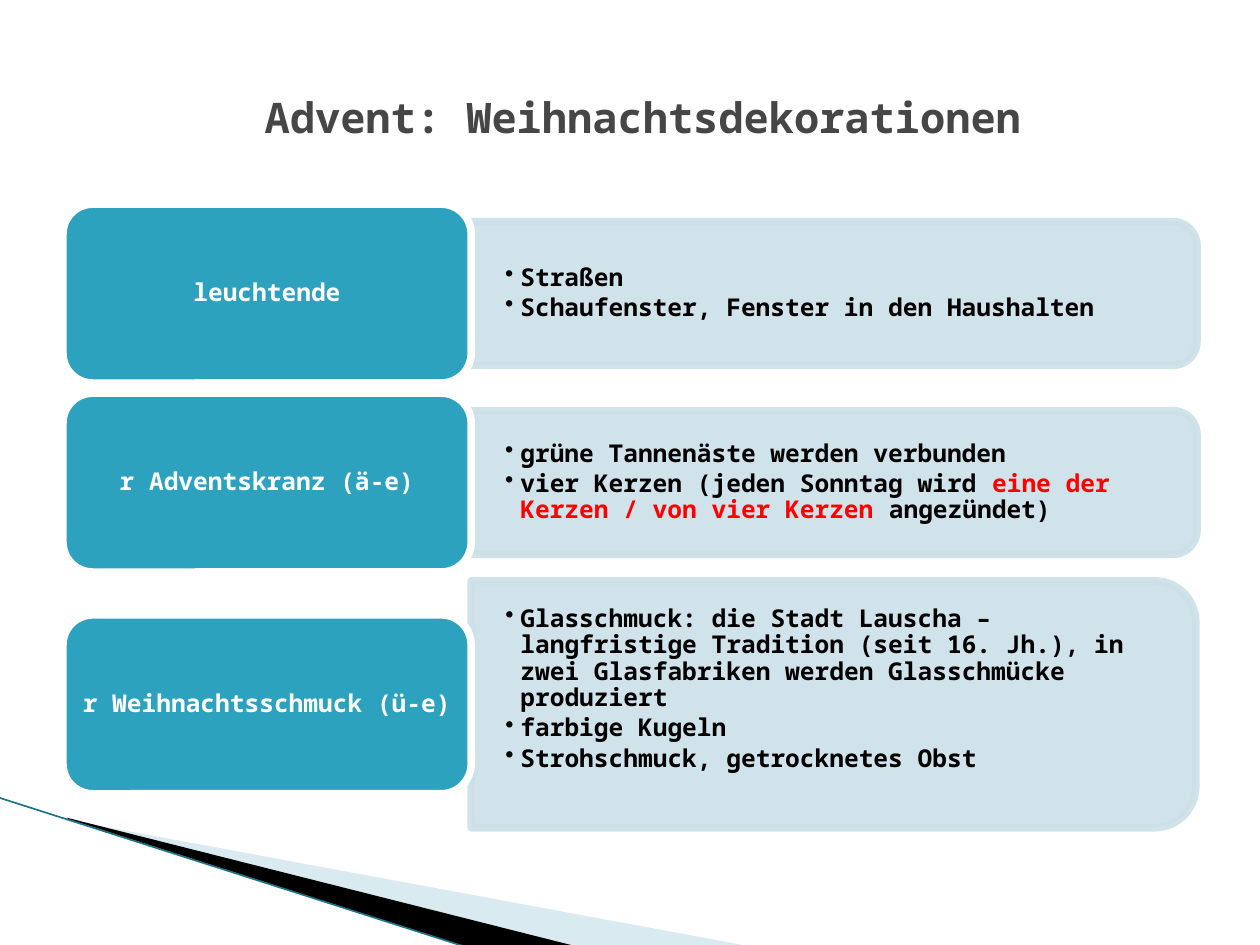
from dataclasses import dataclass
from typing import Any

from lxml.etree import SubElement
from pptx import Presentation
from pptx.dml.color import RGBColor
from pptx.enum.shapes import MSO_CONNECTOR, MSO_SHAPE
from pptx.enum.text import MSO_ANCHOR, PP_ALIGN
from pptx.oxml.ns import qn
from pptx.util import Inches, Pt

COLORS = {
    "title": "464646", "block": "2DA2BF", "panel": "CDE0E8", "white": "FFFFFF",
    "text": "000000", "accent": "FF0000", "wedge": "A0CBDC", "edge": "1F7385",
}
TOPICS = [
    ("leuchtende", 16.2, 11.4, 57.6, 1.4, [
        [("Straßen", "text")],
        [("Schaufenster, Fenster in den Haushalten", "text")],
    ]),
    ("r Adventskranz (ä-e)", 31.2, 11.4, 57.6, 1.4, [
        [("grüne Tannenäste werden verbunden", "text")],
        [("vier Kerzen (jeden Sonntag wird ", "text"),
         ("eine der Kerzen / von vier Kerzen", "accent"),
         (" angezündet)", "text")],
    ]),
    ("r Weihnachtsschmuck (ü-e)", 48.8, 19.6, 57.5, 3.8, [
        [("Glasschmuck: die Stadt Lauscha – langfristige Tradition "
          "(seit 16. Jh.), in zwei Glasfabriken werden Glasschmücke "
          "produziert", "text")],
        [("farbige Kugeln", "text")],
        [("Strohschmuck, getrocknetes Obst", "text")],
    ]),
]
BLOCK_LEFT, BLOCK_WIDTH, BLOCK_HEIGHT = 5, 32.4, 14.2
PANEL_LEFT = BLOCK_LEFT + BLOCK_WIDTH


@dataclass
class Deck:
    """Draws styled elements on a slide divided into 100 columns and 75 rows."""

    slide: Any
    unit: int
    font: str = "Noto Sans Mono"
    border: float = 4.33

    def grid(self, *lengths):
        return [round(length * self.unit) for length in lengths]

    def paint(self, color_format, color, opacity=100):
        color_format.fore_color.rgb = RGBColor.from_string(COLORS[color])
        if opacity < 100:
            for srgb in color_format._xPr.iter(qn("a:srgbClr")):
                SubElement(srgb, qn("a:alpha"), val=str(opacity * 1000))

    def style(self, run, size, color):
        run.font.name, run.font.size, run.font.bold = self.font, Pt(size), True
        run.font.color.rgb = RGBColor.from_string(COLORS[color])

    def frame(self, shape, insets):
        frame = shape.text_frame
        frame.word_wrap, frame.vertical_anchor = True, MSO_ANCHOR.MIDDLE
        (frame.margin_left, frame.margin_top,
         frame.margin_right, frame.margin_bottom) = self.grid(*insets)
        return frame

    def caption(self, shape, text, size, color, insets):
        frame = self.frame(shape, insets)
        frame.text = text
        line = frame.paragraphs[0]
        line.alignment = PP_ALIGN.CENTER
        self.style(line.runs[0], size, color)

    def title(self, text, *box):
        heading = self.slide.shapes.add_textbox(*self.grid(*box))
        self.caption(heading, text, 24, "title", (3, 0.5, 1, 0.5))

    def wedge(self, points, color, opacity=100):
        corners = [self.grid(*point) for point in points]
        builder = self.slide.shapes.build_freeform(*corners[0])
        builder.add_line_segments(corners[1:], close=True)
        wedge = builder.convert_to_shape()
        wedge.shadow.inherit = False
        wedge.fill.solid()
        self.paint(wedge.fill, color, opacity)
        wedge.line.fill.background()

    def edge(self, *ends):
        edge = self.slide.shapes.add_connector(
            MSO_CONNECTOR.STRAIGHT, *self.grid(*ends))
        edge.line.width = Pt(0.95)
        edge.line.color.rgb = RGBColor.from_string(COLORS["edge"])
        SubElement(edge._element.spPr, qn("a:effectLst"))

    def card(self, kind, box, fill, line, opacity=100):
        card = self.slide.shapes.add_shape(kind, *self.grid(*box))
        card.shadow.inherit = False
        card.line.width = Pt(self.border)
        for part, color in ((card.fill, fill), (card.line.fill, line)):
            part.solid()
            self.paint(part, color, opacity)
        return card

    def block(self, text, top):
        box = (BLOCK_LEFT, top, BLOCK_WIDTH, BLOCK_HEIGHT)
        block = self.card(MSO_SHAPE.ROUNDED_RECTANGLE, box, "block", "white")
        self.caption(block, text, 14, "white", (0.6, 0.3, 0.6, 0.3))
        block.text_frame.paragraphs[0].line_spacing = 0.9

    def panel(self, middle, height, width):
        center = PANEL_LEFT + width / 2
        box = (center - height / 2, middle - width / 2, height, width)
        panel = self.card(MSO_SHAPE.ROUND_2_SAME_RECTANGLE, box,
                          "panel", "panel", 90)
        panel.rotation = 90

    def bullets(self, items, middle, height, width, bottom):
        box = (PANEL_LEFT, middle - height / 2, width, height)
        listing = self.slide.shapes.add_textbox(*self.grid(*box))
        frame = self.frame(listing, (2.7, 1.4, 2.7, bottom))
        for index, item in enumerate(items):
            line = frame.add_paragraph() if index else frame.paragraphs[0]
            line.level = 1
            properties = line._p.get_or_add_pPr()
            properties.set("marL", str(Inches(0.12)))
            properties.set("indent", str(-Inches(0.12)))
            SubElement(properties, qn("a:buChar"), char="•")
            line.line_spacing, line.space_after = 0.9, Pt(2.1)
            for text, color in item:
                run = line.add_run()
                run.text = text
                self.style(run, 14, color)


def main():
    presentation = Presentation()
    presentation.slide_width, presentation.slide_height = Inches(10), Inches(7.5)
    slide = presentation.slides.add_slide(presentation.slide_layouts[6])
    deck = Deck(slide, presentation.slide_width // 100)
    deck.wedge([(5.5, 65.1), (59.5, 75.1), (45.6, 75.1), (5.5, 65)], "wedge", 40)
    deck.wedge([(5.3, 64.9), (45.7, 75.1), (37.2, 75.2), (5.4, 65)], "text")
    deck.edge(-0.1, 63.3, 37.1, 75.2)
    for label, top, height, width, bottom, items in TOPICS:
        middle = top + BLOCK_HEIGHT / 2
        deck.panel(middle, height, width)
        deck.bullets(items, middle, height * 0.9, width - 0.6, bottom)
        deck.block(label, top)
    deck.title("Advent: Weihnachtsdekorationen", 5, 3, 90, 12.5)
    presentation.save("out.pptx")


if __name__ == "__main__":
    main()
